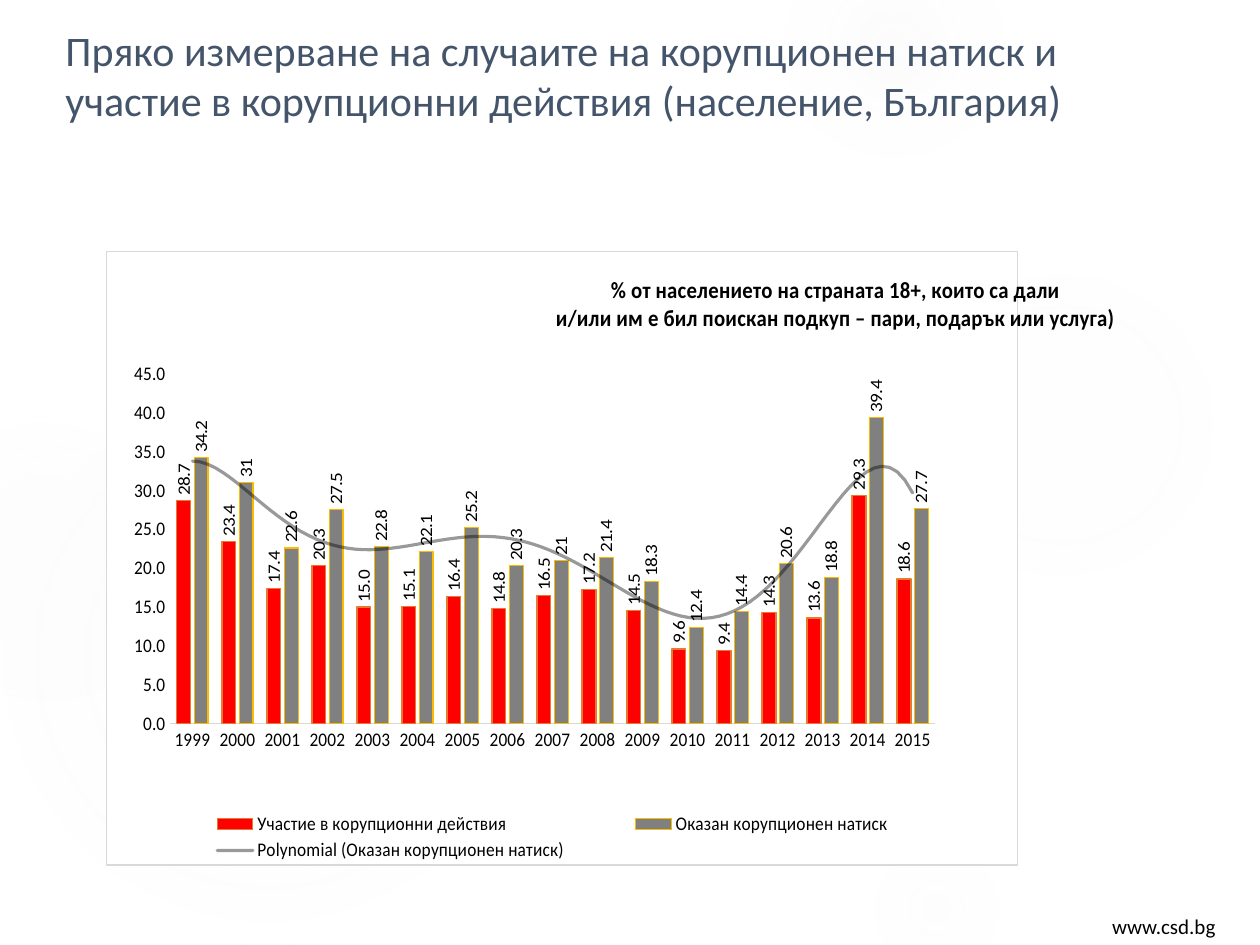
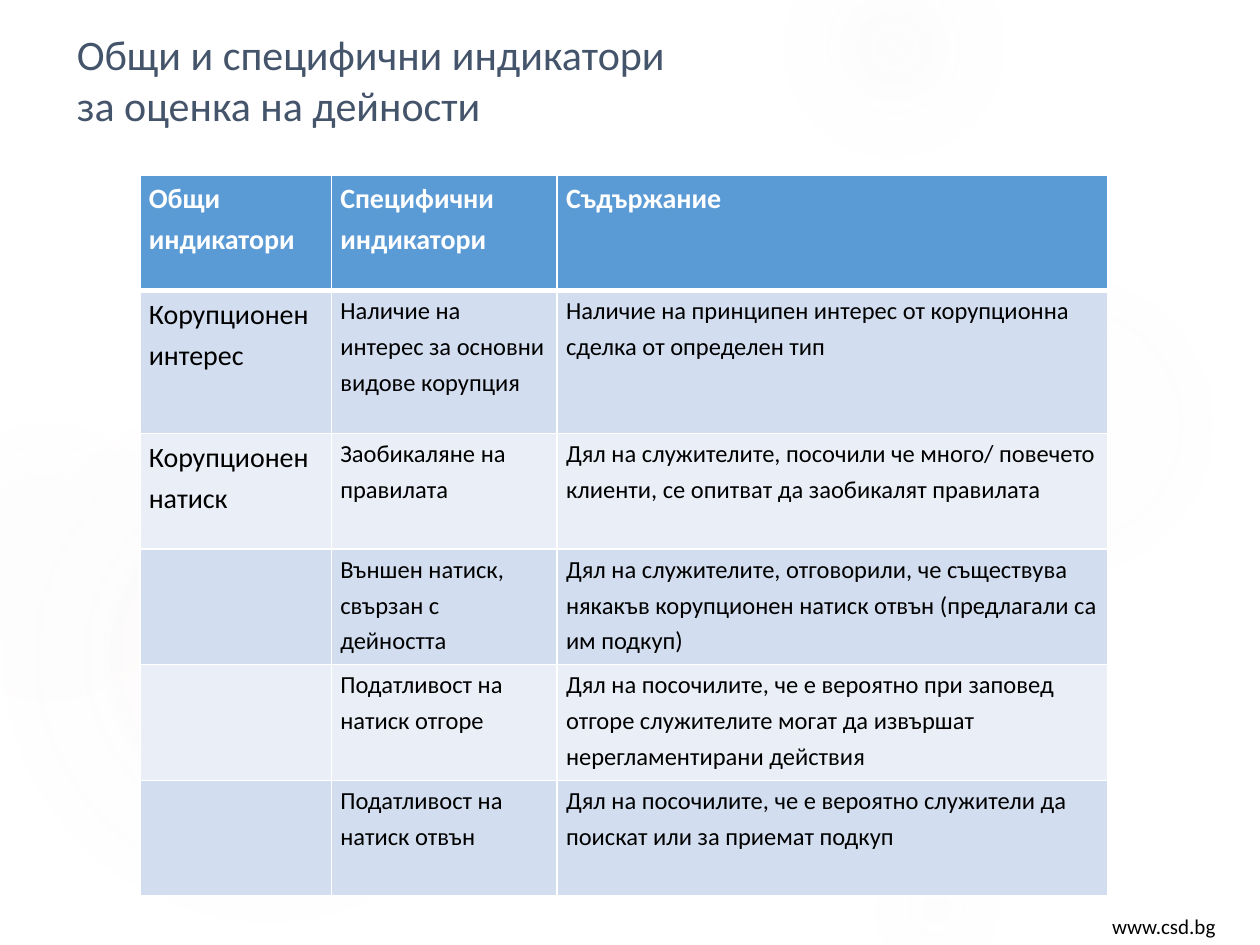
import dataclasses

import lxml.etree
import pptx
import pptx.chart.data
import pptx.dml.color
import pptx.enum.chart
import pptx.enum.shapes
import pptx.enum.text
import pptx.oxml
import pptx.oxml.ns
import pptx.util

Cm = pptx.util.Cm
Pt = pptx.util.Pt
RGB = pptx.dml.color.RGBColor.from_string
qn = pptx.oxml.ns.qn
NS = pptx.oxml.ns.nsdecls("a", "c")


@dataclasses.dataclass(frozen=True)
class Theme:
    font: str = "Calibri"
    title: str = "44546A"
    text: str = "000000"
    white: str = "FFFFFF"
    circle: str = "F1F0F0"
    frame: str = "D9D9D9"
    header: str = "5B9BD5"
    bands: tuple = ("D2DEEF", "EAEFF7")
    title_size: float = 24
    footer_size: float = 12
    chart_size: float = 11
    chart_title_size: float = 13.2
    indicator_size: float = 16
    detail_size: float = 14


theme = Theme()


def style_font(font, size, color, bold=False):
    font.name = theme.font
    font.size = Pt(size)
    font.bold = bold
    font.color.rgb = RGB(color)


def place_in_chart(part, **fractions):
    """Give a chart part a manual layout in fractions of the chart."""
    for old in part.findall(qn("c:layout")):
        part.remove(old)
    inner = '<c:layoutTarget val="inner"/>' if part.tag == qn("c:plotArea") else ""
    modes = "".join(f'<c:{axis}Mode val="edge"/>' for axis in "xy")
    values = "".join(f'<c:{key} val="{value}"/>' for key, value in fractions.items())
    layout = pptx.oxml.parse_xml(
        f"<c:layout {NS}><c:manualLayout>{inner}{modes}{values}</c:manualLayout></c:layout>")
    overlay = part.find(qn("c:overlay"))
    if overlay is None:
        part.insert(0, layout)
    else:
        overlay.addprevious(layout)


presentation = pptx.Presentation()
presentation.slide_width = Cm(25.4)
presentation.slide_height = Cm(19.05)

# Shared: pale circles as left, top, diameter and (position, alpha) stops in percent
circles = [
    (17.5, 4.65, 7.82, [(0, 7), (36, 6), (69, 0)]),
    (15.8, -1.27, 4.45, [(0, 14), (36, 7), (73, 0)]),
    (17.5, 16.94, 2.74, [(0, 9), (36, 5), (66, 0)]),
    (-0.43, 7.42, 11.63, [(0, 11), (36, 10), (75, 0)]),
    (-2.34, 8.05, 6.55, [(0, 8), (36, 8), (72, 0)]),
]
headings = [
    ("Пряко измерване на случаите на корупционен натиск и участие "
     "в корупционни действия (население, България)", (1.07, 0.36, 22.63, 4.75)),
    ("Общи и специфични индикатори\nза оценка на дейности", (1.3, 0.46, 19.61, 1.98)),
]
footer = ("www.csd.bg", (22.17, 18.29, 3.23, 0.76))

for heading, heading_place in headings:
    slide = presentation.slides.add_slide(presentation.slide_layouts[6])
    slide.background.fill.solid()
    slide.background.fill.fore_color.rgb = RGB(theme.white)

    for left, top, diameter, stops in circles:
        circle = slide.shapes.add_shape(
            pptx.enum.shapes.MSO_SHAPE.OVAL, Cm(left), Cm(top), Cm(diameter), Cm(diameter))
        circle.shadow.inherit = False
        circle.line.fill.background()
        stop_xml = "".join(
            f'<a:gs pos="{position * 1000}"><a:srgbClr val="{theme.circle}">'
            f'<a:alpha val="{alpha * 1000}"/></a:srgbClr></a:gs>' for position, alpha in stops)
        gradient = pptx.oxml.parse_xml(
            f'<a:gradFill {NS} rotWithShape="1"><a:gsLst>{stop_xml}</a:gsLst><a:path path="circle">'
            '<a:fillToRect l="50000" t="50000" r="50000" b="50000"/></a:path></a:gradFill>')
        circle.element.spPr.find(qn("a:prstGeom")).addnext(gradient)

    # Footer and title
    for (words, place), size, color in (
            (footer, theme.footer_size, theme.text),
            ((heading, heading_place), theme.title_size, theme.title)):
        caption = slide.shapes.add_textbox(*map(Cm, place)).text_frame
        caption.word_wrap = True
        caption.vertical_anchor = pptx.enum.text.MSO_ANCHOR.TOP
        caption.paragraphs[0].text = words
        for run in caption.paragraphs[0].runs:
            style_font(run.font, size, color)

chart_slide, table_slide = presentation.slides

# Slide 1: corruption pressure and participation by year
participation = [28.7, 23.4, 17.4, 20.3, 15, 15.1, 16.4, 14.8, 16.5, 17.2,
                 14.5, 9.6, 9.4, 14.3, 13.6, 29.3, 18.6]
pressure = [34.2, 31, 22.6, 27.5, 22.8, 22.1, 25.2, 20.3, 21, 21.4,
            18.3, 12.4, 14.4, 20.6, 18.8, 39.4, 27.7]
# Name, values, number format, fill, outline
measures = [
    ("Участие в корупционни действия", participation, "0.0", "FF0000", "E87A30"),
    ("Оказан корупционен натиск", pressure, "General", "808080", "F9BC00"),
]
survey = pptx.chart.data.CategoryChartData()
survey.categories = [str(year) for year in range(1999, 2016)]
for name, values, number_format, *_ in measures:
    survey.add_series(name, values, number_format)
chart = chart_slide.shapes.add_chart(
    pptx.enum.chart.XL_CHART_TYPE.COLUMN_CLUSTERED,
    Cm(2.13), Cm(5.05), Cm(20.42), Cm(12.4), survey).chart
style_font(chart.font, theme.chart_size, theme.text)

# Chart frame
chart.element.find(qn("c:chart")).addnext(pptx.oxml.parse_xml(
    f'<c:spPr {NS}><a:solidFill><a:srgbClr val="{theme.white}"/></a:solidFill><a:ln w="9525">'
    f'<a:solidFill><a:srgbClr val="{theme.frame}"/></a:solidFill></a:ln></c:spPr>'))

# Chart title
chart.has_title = True
chart.chart_title.text_frame.text = (
    "% от населението на страната 18+, които са дали\n"
    "и/или им е бил поискан подкуп – пари, подарък или услуга)")
for paragraph in chart.chart_title.text_frame.paragraphs:
    for run in paragraph.runs:
        style_font(run.font, theme.chart_title_size, theme.text, bold=True)

# Legend, without the trend entry
chart.has_legend = True
chart.legend.position = pptx.enum.chart.XL_LEGEND_POSITION.RIGHT
chart.legend.include_in_layout = False
legend = chart.element.xpath(".//c:legend")[0]
legend.find(qn("c:legendPos")).addnext(pptx.oxml.parse_xml(
    f'<c:legendEntry {NS}><c:idx val="2"/><c:delete val="1"/></c:legendEntry>'))

place_in_chart(chart.element.xpath(".//c:chart/c:title")[0], x=0.49, y=0.03)
place_in_chart(chart.element.xpath(".//c:plotArea")[0], x=0.07, y=0.2, w=0.84, h=0.57)
place_in_chart(legend, x=0.05, y=0.91, w=0.88, h=0.09)

# Axes
years, percent = chart.category_axis, chart.value_axis
for axis in (years, percent):
    axis.has_major_gridlines = False
    axis.major_tick_mark = pptx.enum.chart.XL_TICK_MARK.NONE
    axis.minor_tick_mark = pptx.enum.chart.XL_TICK_MARK.NONE
years.format.line.color.rgb = RGB(theme.frame)
years.format.line.width = Pt(0.75)
percent.format.line.fill.background()
percent.minimum_scale, percent.maximum_scale, percent.major_unit = 0, 45, 5
percent.tick_labels.number_format = "0.0"
percent.tick_labels.number_format_is_linked = False

# Columns with upright labels
columns = chart.plots[0]
columns.gap_width = 100
columns.overlap = -24
columns.vary_by_categories = False
for series, (_, _, number_format, fill, outline) in zip(columns.series, measures):
    series.invert_if_negative = False
    series.format.fill.solid()
    series.format.fill.fore_color.rgb = RGB(fill)
    series.format.line.color.rgb = RGB(outline)
    series.format.line.width = Pt(0.75)
    labels = series.data_labels
    labels.show_value = True
    labels.number_format = number_format
    labels.number_format_is_linked = False
    labels.position = pptx.enum.chart.XL_LABEL_POSITION.OUTSIDE_END
    style_font(labels.font, theme.chart_size, theme.text)
    rotation = series._element.xpath("./c:dLbls/c:txPr/a:bodyPr")[0]
    rotation.set("rot", "-5400000")
    rotation.set("vert", "horz")

# Trend of the pressure series
columns.series[1]._element.find(qn("c:cat")).addprevious(pptx.oxml.parse_xml(
    f'<c:trendline {NS}><c:spPr><a:ln w="25400" cap="rnd"><a:solidFill>'
    f'<a:srgbClr val="{theme.text}"><a:alpha val="40000"/></a:srgbClr></a:solidFill></a:ln></c:spPr>'
    '<c:trendlineType val="poly"/><c:order val="6"/>'
    '<c:dispRSqr val="0"/><c:dispEq val="0"/></c:trendline>'))

# Slide 2: indicators
indicators = [
    ("Общи индикатори", "Специфични индикатори", "Съдържание"),
    ("Корупционен интерес", "Наличие на интерес за основни видове корупция",
     "Наличие на принципен интерес от корупционна сделка от определен тип"),
    ("Корупционен натиск", "Заобикаляне на правилата",
     "Дял на служителите, посочили че много/ повечето клиенти, се опитват да заобикалят правилата"),
    ("", "Външен натиск, свързан с дейността",
     "Дял на служителите, отговорили, че съществува някакъв корупционен натиск отвън "
     "(предлагали са им подкуп)"),
    ("", "Податливост на натиск отгоре",
     "Дял на посочилите, че е вероятно при заповед отгоре служителите могат да извършат "
     "нерегламентирани действия"),
    ("", "Податливост на натиск отвън",
     "Дял на посочилите, че е вероятно служители да поискат или за приемат подкуп"),
]
widths = [3.86, 4.55, 11.1]
heights = [2.33, 2.88] + [2.33] * 4
table = table_slide.shapes.add_table(
    len(heights), len(widths), Cm(2.82), Cm(3.53), Cm(sum(widths)), Cm(sum(heights))).table
for column, width in zip(table.columns, widths):
    column.width = Cm(width)
for row, height in zip(table.rows, heights):
    row.height = Cm(height)

for row_index, row_words in enumerate(indicators):
    is_header = row_index == 0
    for column_index, words in enumerate(row_words):
        cell = table.cell(row_index, column_index)
        cell.margin_left = cell.margin_right = Cm(0.18)
        cell.margin_top = cell.margin_bottom = 0
        cell.fill.solid()
        cell.fill.fore_color.rgb = RGB(
            theme.header if is_header else theme.bands[(row_index - 1) % 2])
        paragraph = cell.text_frame.paragraphs[0]
        paragraph.text = words
        paragraph.line_spacing = 1.2
        paragraph.space_after = Pt(3)
        size = theme.indicator_size if is_header or column_index == 0 else theme.detail_size
        for run in paragraph.runs:
            style_font(run.font, size, theme.white if is_header else theme.text, is_header)

        # White borders, thicker under the header
        borders = {"lnL": 1, "lnR": 1, "lnT": 3 if row_index == 1 else 1, "lnB": 3 if is_header else 1}
        for position, (side, points) in enumerate(borders.items()):
            cell._tc.get_or_add_tcPr().insert(position, pptx.oxml.parse_xml(
                f'<a:{side} {NS} w="{Pt(points)}"><a:solidFill>'
                f'<a:srgbClr val="{theme.white}"/></a:solidFill></a:{side}>'))

presentation.save("out.pptx")
